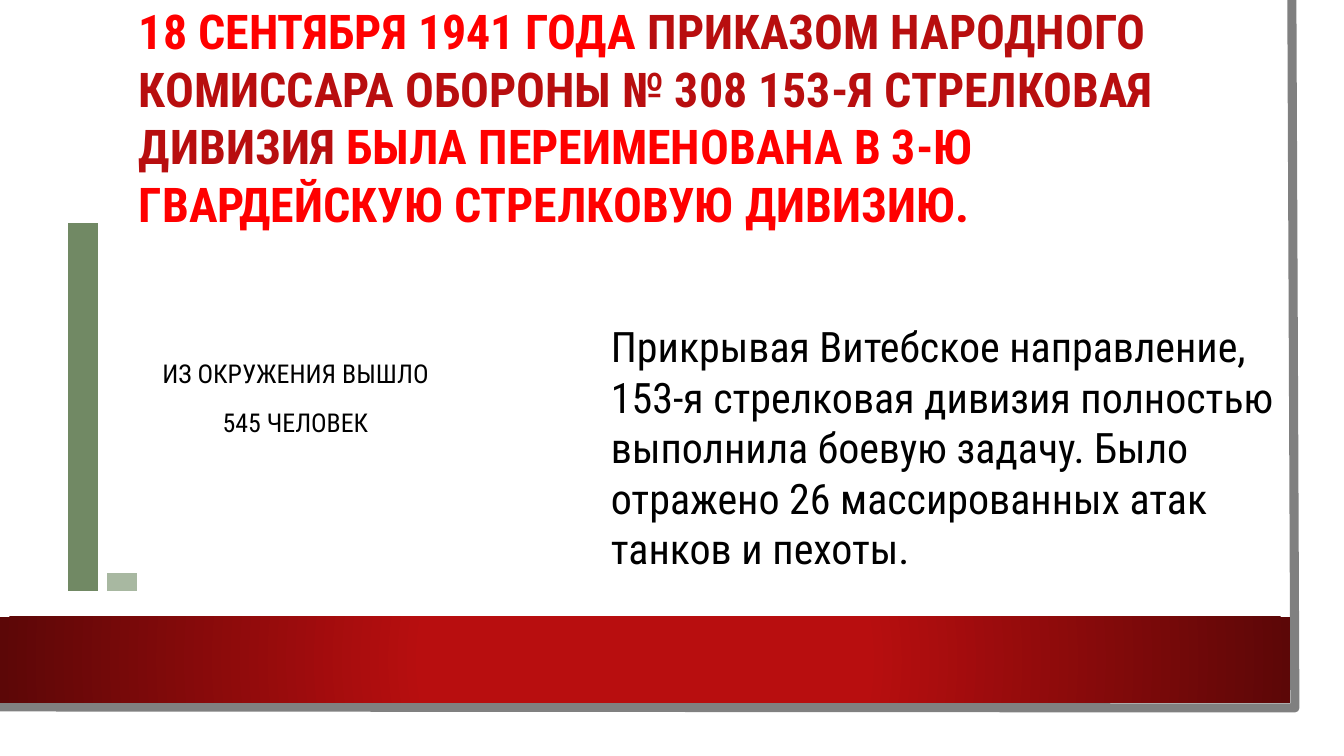
from dataclasses import dataclass

import pptx
import pptx.chart.data
import pptx.dml.color
import pptx.enum.chart
import pptx.enum.shapes
import pptx.enum.text
import pptx.oxml
import pptx.oxml.ns
import pptx.util


@dataclass(frozen=True)
class Theme:
    font: str = "Roboto Condensed"
    paper: str = "FFFFFF"
    ink: str = "000000"
    edge: str = "808080"
    crimson: str = "B80E0F"
    maroon: str = "5C0707"
    red: str = "FF0000"
    green: str = "718964"
    pale_green: str = "A8B8A1"
    title_size: float = 34.2
    story_size: float = 30
    caption_size: float = 18.5
    chart_size: float = 10
    edge_width: float = 6.5


def px(length):
    return round(length * 914400 / 100.8)


def rgb(value):
    return pptx.dml.color.RGBColor.from_string(value)


class SlideBuilder:
    """Draws styled elements on one slide, with lengths in px."""

    def __init__(self, slide, theme):
        self.slide = slide
        self.theme = theme

    def rectangle(self, x, y, width, height, color):
        shape = self.slide.shapes.add_shape(
            pptx.enum.shapes.MSO_SHAPE.RECTANGLE, px(x), px(y), px(width), px(height))
        shape.shadow.inherit = False
        shape.fill.solid()
        shape.fill.fore_color.rgb = rgb(color)
        shape.line.fill.background()
        return shape

    def radial_band(self, x, y, width, height, stops):
        band = self.rectangle(x, y, width, height, stops[0][1])
        stop_xml = "".join(
            f'<a:gs pos="{percent * 1000}"><a:srgbClr val="{color}"/></a:gs>'
            for percent, color in stops)
        gradient = pptx.oxml.parse_xml(
            f'<a:gradFill {pptx.oxml.ns.nsdecls("a")} rotWithShape="1">'
            f'<a:gsLst>{stop_xml}</a:gsLst><a:path path="circle">'
            '<a:fillToRect l="50000" t="50000" r="50000" b="50000"/>'
            '</a:path></a:gradFill>')
        properties = band._element.spPr
        properties.replace(properties.find(pptx.oxml.ns.qn("a:solidFill")), gradient)

    def outline(self, start, *points):
        builder = self.slide.shapes.build_freeform(*start, scale=px(1))
        builder.add_line_segments(points, close=False)
        shape = builder.convert_to_shape()
        shape.shadow.inherit = False
        shape.fill.background()
        shape.line.color.rgb = rgb(self.theme.edge)
        shape.line.width = pptx.util.Pt(self.theme.edge_width)

    def text(self, x, y, width, height, paragraphs, size, bold=False,
             centered=False, line_spacing=None, gap=0):
        frame = self.slide.shapes.add_textbox(
            px(x), px(y), px(width), px(height)).text_frame
        frame.word_wrap = True
        frame.margin_top = frame.margin_bottom = 0
        for index, runs in enumerate(paragraphs):
            paragraph = frame.paragraphs[0] if index == 0 else frame.add_paragraph()
            if centered:
                paragraph.alignment = pptx.enum.text.PP_ALIGN.CENTER
            if line_spacing:
                paragraph.line_spacing = line_spacing
            if index:
                paragraph.space_before = pptx.util.Pt(gap)
            for words, color in runs:
                run = paragraph.add_run()
                run.text = words
                run.font.name = self.theme.font
                run.font.size = pptx.util.Pt(size)
                run.font.bold = bold
                run.font.color.rgb = rgb(color)

    def columns(self, x, y, width, height, categories, series, maximum, plot):
        data = pptx.chart.data.CategoryChartData()
        data.categories = categories
        for name, values, color in series:
            data.add_series(name, values)
        chart = self.slide.shapes.add_chart(
            pptx.enum.chart.XL_CHART_TYPE.COLUMN_CLUSTERED,
            px(x), px(y), px(width), px(height), data).chart
        chart.has_legend = False
        chart.has_title = False
        chart.font.name = self.theme.font
        chart.font.size = pptx.util.Pt(self.theme.chart_size)
        chart.font.color.rgb = rgb(self.theme.ink)
        chart.value_axis.has_major_gridlines = False
        chart.value_axis.minimum_scale = 0
        chart.value_axis.maximum_scale = maximum
        chart.value_axis.visible = False
        chart.category_axis.visible = False
        bars = chart.plots[0]
        bars.vary_by_categories = False
        bars.gap_width = 219
        bars.overlap = -27
        for column, (name, values, color) in zip(bars.series, series):
            column.format.fill.solid()
            column.format.fill.fore_color.rgb = rgb(color)
        plot_area = chart._chartSpace.chart.plotArea
        for old in plot_area.findall(pptx.oxml.ns.qn("c:layout")):
            plot_area.remove(old)
        sizes = "".join(f'<c:{key} val="{value}"/>' for key, value in zip("xywh", plot))
        plot_area.insert(0, pptx.oxml.parse_xml(
            f'<c:layout {pptx.oxml.ns.nsdecls("c")}><c:manualLayout>'
            '<c:layoutTarget val="inner"/><c:xMode val="edge"/><c:yMode val="edge"/>'
            f'{sizes}</c:manualLayout></c:layout>'))


def main():
    theme = Theme()
    presentation = pptx.Presentation()
    presentation.slide_width = px(1344)
    presentation.slide_height = px(756)
    page = SlideBuilder(
        presentation.slides.add_slide(presentation.slide_layouts[6]), theme)

    page.rectangle(0, 0, 1320, 733, theme.paper)
    page.outline((1292, 0), (1295, 708), (-3, 707))
    page.radial_band(0, 617, 1290, 86, [(34, theme.crimson), (100, theme.maroon)])
    page.text(129, 2, 1159, 230, [[
        ("18 СЕНТЯБРЯ 1941 ГОДА ", theme.red),
        ("ПРИКАЗОМ НАРОДНОГО КОМИССАРА ОБОРОНЫ № 308 153-Я СТРЕЛКОВАЯ ДИВИЗИЯ ",
         theme.crimson),
        ("БЫЛА ПЕРЕИМЕНОВАНА В 3-Ю ГВАРДЕЙСКУЮ СТРЕЛКОВУЮ ДИВИЗИЮ.", theme.red),
    ]], theme.title_size, bold=True)
    page.text(113, 355, 365, 84, [
        [("ИЗ ОКРУЖЕНИЯ ВЫШЛО", theme.ink)],
        [("545 ЧЕЛОВЕК", theme.ink)],
    ], theme.caption_size, centered=True, line_spacing=1.1, gap=10)
    page.columns(34, 162, 567, 453, ["1", "2", "3", "4"], [
        ("Series 1", [100, None, None, None], theme.green),
        ("Series 2", [5, None, None, None], theme.pale_green),
    ], maximum=116.6, plot=(0, 0, 0.966, 0.948))
    page.text(601, 321, 730, 255, [[
        ("Прикрывая Витебское направление, 153-я стрелковая дивизия полностью "
         "выполнила боевую задачу. Было отражено 26 массированных атак танков и пехоты.",
         theme.ink),
    ]], theme.story_size)

    presentation.save("out.pptx")


if __name__ == "__main__":
    main()
